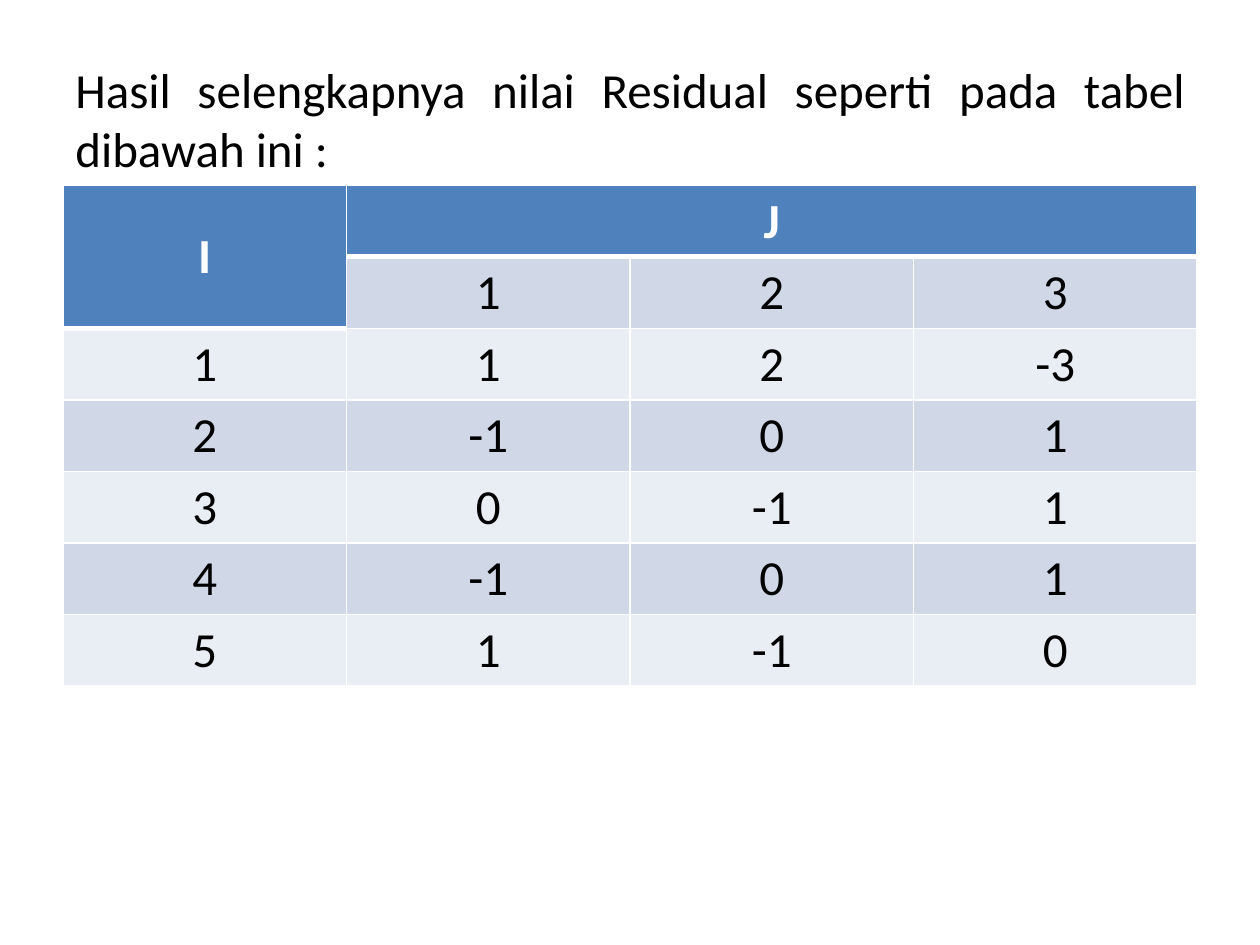
from lxml.etree import SubElement
from pptx import Presentation
from pptx.dml.color import RGBColor
from pptx.enum.text import MSO_ANCHOR, PP_ALIGN
from pptx.oxml.ns import qn
from pptx.util import Inches, Pt


def color(code):
    return RGBColor.from_string(code)


class Page:
    font, size = "Calibri", 28
    ink, paper, head = "000000", "FFFFFF", "4F81BD"
    bands = "E9EDF4", "D0D8E8"

    def __init__(self, deck):
        self.wide, self.high = deck.slide_width, deck.slide_height
        self.slide = deck.slides.add_slide(deck.slide_layouts[6])

    def place(self, x, y, w, h):
        return (int(self.wide * x), int(self.high * y),
                int(self.wide * w), int(self.high * h))

    def label(self, frame, text, align, ink, bold=False):
        frame.text = text
        para = frame.paragraphs[0]
        para.alignment = align
        font = para.font
        font.name, font.size, font.bold = self.font, Pt(self.size), bold
        font.color.rgb = color(ink)

    def title(self, text, *box):
        frame = self.slide.shapes.add_textbox(*self.place(*box)).text_frame
        frame.word_wrap = True
        frame.vertical_anchor = MSO_ANCHOR.MIDDLE
        self.label(frame, text, PP_ALIGN.JUSTIFY, self.ink)

    def border(self, cell, side, width):
        line = SubElement(cell._tc.get_or_add_tcPr(), qn("a:ln" + side),
                          w=str(Pt(width)))
        fill = SubElement(line, qn("a:solidFill"))
        SubElement(fill, qn("a:srgbClr"), val=self.paper)

    def cell(self, cell, text, row, head, top, base):
        for side, width in zip("LRTB", (1, 1, top, base)):
            self.border(cell, side, width)
        cell.fill.solid()
        cell.fill.fore_color.rgb = color(self.head if head else self.bands[row % 2])
        cell.vertical_anchor = MSO_ANCHOR.MIDDLE
        self.label(cell.text_frame, text, PP_ALIGN.CENTER,
                   self.paper if head else self.ink, head)

    def table(self, rows, heads, spans, *box):
        grid = self.slide.shapes.add_table(
            len(rows), len(rows[0]), *self.place(*box)).table
        for r, row in enumerate(rows):
            for c, text in enumerate(row):
                head = (r, c) in heads
                top = 3 if (r - 1, c) in heads else 1
                self.cell(grid.cell(r, c), text, r, head, top, 3 if head else 1)
        for start, end in spans:
            grid.cell(*start).merge(grid.cell(*end))


def main():
    deck = Presentation()
    deck.slide_width, deck.slide_height = Inches(10), Inches(7.5)
    page = Page(deck)
    page.title("Hasil selengkapnya nilai Residual seperti pada tabel dibawah ini :",
               0.05, 0.04, 0.9, 0.17)
    rows = [
        ["I", "J", "", ""],
        ["", "1", "2", "3"],
        ["1", "1", "2", "-3"],
        ["2", "-1", "0", "1"],
        ["3", "0", "-1", "1"],
        ["4", "-1", "0", "1"],
        ["5", "1", "-1", "0"],
    ]
    heads = {(0, 0), (0, 1), (0, 2), (0, 3), (1, 0)}
    spans = [((0, 0), (1, 0)), ((0, 1), (0, 3))]
    page.table(rows, heads, spans, 0.05, 1.47 / 7.5, 0.9, 0.53)
    deck.save("out.pptx")


if __name__ == "__main__":
    main()
